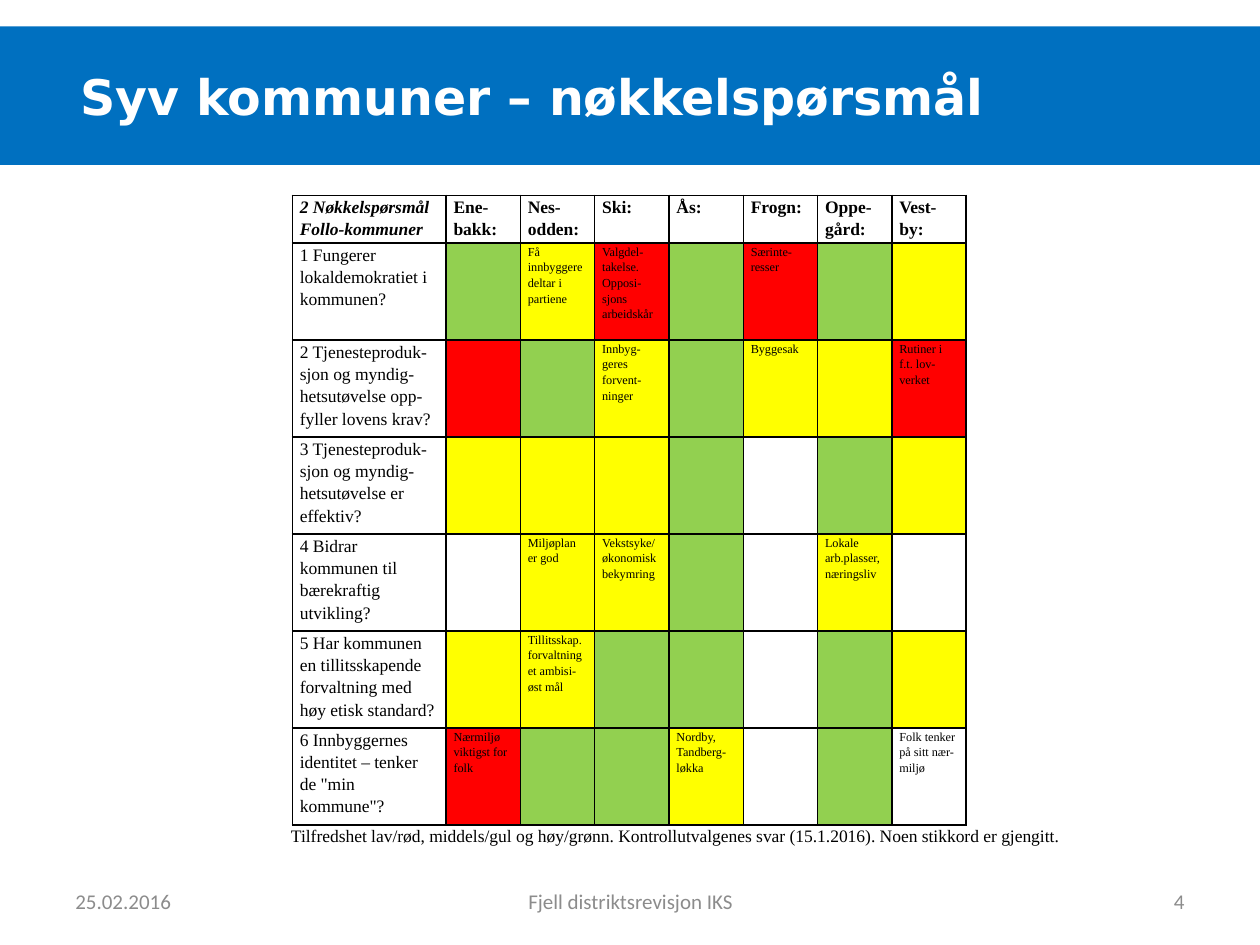
from typing import NamedTuple

from lxml import etree
from pptx import Presentation
from pptx.dml.color import RGBColor
from pptx.enum.text import MSO_ANCHOR, PP_ALIGN
from pptx.oxml.ns import qn
from pptx.util import Inches, Pt

SERIF = "Times New Roman"
BLACK, GREY, WHITE, BLUE = "000000", "8C8C8C", "FFFFFF", "0070C0"
RATING = {"g": "92D050", "y": "FFFF00", "r": "FF0000"}


class Style(NamedTuple):
    size: float
    font: str
    color: str
    bold: bool = False
    italic: bool = False


class Label(NamedTuple):
    text: str
    left: float
    top: float
    width: float
    height: float
    style: Style
    align: PP_ALIGN = PP_ALIGN.LEFT
    inset: float = 0.1


class Question(NamedTuple):
    text: str
    ratings: str  # one letter per municipality, "-" for no rating
    notes: dict[int, str]  # municipality column -> keyword


TITLE = Style(28, "DejaVu Sans", WHITE, bold=True)
FOOTER = Style(12, "Calibri", GREY)
BODY = Style(10, SERIF, BLACK)
HEAD = BODY._replace(bold=True)
NOTE = BODY._replace(size=7)

MUNICIPALITIES = ["Ene-bakk:", "Nes-odden:", "Ski:", "Ås:", "Frogn:",
                  "Oppe-gård:", "Vest-by:"]
QUESTIONS = [
    Question("1 Fungerer lokaldemokratiet i kommunen?", "gyrgrgy",
             {2: "Få innbyggere deltar i partiene",
              3: "Valgdel-takelse. Opposi-sjons arbeidskår",
              5: "Særinte-resser"}),
    Question("2 Tjenesteproduk-sjon og myndig-hetsutøvelse opp-fyller lovens krav?",
             "rgygyyr",
             {3: "Innbyg-geres forvent-ninger", 5: "Byggesak",
              7: "Rutiner i f.t. lov-verket"}),
    Question("3 Tjenesteproduk-sjon og myndig-hetsutøvelse er effektiv?",
             "yyyg-gy", {}),
    Question("4 Bidrar kommunen til bærekraftig utvikling?", "-yyg-y-",
             {2: "Miljøplan er god", 3: "Vekstsyke/ økonomisk bekymring",
              6: "Lokale arb.plasser, næringsliv"}),
    Question("5 Har kommunen en tillitsskapende forvaltning med høy etisk standard?",
             "yygg-gy", {2: "Tillitsskap. forvaltning et ambisi-øst mål"}),
    Question('6 Innbyggernes identitet – tenker de "min kommune"?', "rggy-g-",
             {1: "Nærmiljø viktigst for folk", 4: "Nordby, Tandberg-løkka",
              7: "Folk tenker på sitt nær-miljø"}),
]
LABELS = [
    Label("Tilfredshet lav/rød, middels/gul og høy/grønn. Kontrollutvalgenes svar "
          "(15.1.2016). Noen stikkord er gjengitt.",
          2.31, 6.53, 6.4, 0.2, BODY, inset=0),
    Label("25.02.2016", 0.5, 6.95, 2.33, 0.4, FOOTER),
    Label("Fjell distriktsrevisjon IKS", 3.42, 6.95, 3.17, 0.4, FOOTER, PP_ALIGN.CENTER),
    Label("4", 7.17, 6.95, 2.33, 0.4, FOOTER, PP_ALIGN.RIGHT),
]


def rgb(color: str) -> RGBColor:
    return RGBColor.from_string(color)


def add_run(p, text: str, style: Style) -> None:
    r = p.add_run()
    r.text = text
    r.font.size, r.font.name = Pt(style.size), style.font
    r.font.bold, r.font.italic = style.bold, style.italic
    r.font.color.rgb = rgb(style.color)


def add_label(s, label: Label) -> None:
    sp = s.shapes.add_textbox(Inches(label.left), Inches(label.top),
                              Inches(label.width), Inches(label.height))
    tf = sp.text_frame
    tf.word_wrap = True
    tf.vertical_anchor = MSO_ANCHOR.MIDDLE
    tf.margin_left = tf.margin_right = Inches(label.inset)
    tf.margin_top = tf.margin_bottom = 0
    p = tf.paragraphs[0]
    p.alignment = label.align
    add_run(p, label.text, label.style)


def add_borders(cell) -> None:
    # Border lines have to stand before the fill
    tc_pr = cell._tc.get_or_add_tcPr()
    for i, side in enumerate(("lnL", "lnR", "lnT", "lnB")):
        ln = etree.Element(qn(f"a:{side}"), w=str(Pt(1)))
        fill = etree.SubElement(ln, qn("a:solidFill"))
        etree.SubElement(fill, qn("a:srgbClr"), val=BLACK)
        tc_pr.insert(i, ln)


def fill_cell(cell, text: str, style: Style, rating: str = "-") -> None:
    cell.margin_left = cell.margin_right = Inches(0.06)
    cell.margin_top = cell.margin_bottom = 0
    if rating in RATING:
        cell.fill.solid()
        cell.fill.fore_color.rgb = rgb(RATING[rating])
    else:
        cell.fill.background()
    add_borders(cell)
    p = cell.text_frame.paragraphs[0]
    p.line_spacing = 1.15
    if text:
        add_run(p, text, style)


def add_title(s, text: str) -> None:
    sp = s.shapes.title
    sp.left, sp.top = Inches(0), Inches(0.21)
    sp.width, sp.height = Inches(10), Inches(1.1)
    sp.fill.solid()
    sp.fill.fore_color.rgb = rgb(BLUE)
    tf = sp.text_frame
    tf.margin_left = Inches(0.64)
    tf.vertical_anchor = MSO_ANCHOR.MIDDLE
    p = tf.paragraphs[0]
    p.alignment = PP_ALIGN.LEFT
    add_run(p, text, TITLE)


def add_rating_table(s) -> None:
    n_rows, n_cols = len(QUESTIONS) + 1, len(MUNICIPALITIES) + 1
    table = s.shapes.add_table(n_rows, n_cols, Inches(2.32), Inches(1.55),
                               Inches(5.35), Inches(4.98)).table
    table.first_row = table.horz_banding = False
    for i, col in enumerate(table.columns):
        col.width = Inches(0.59 if i else 1.22)
    for i, row in enumerate(table.rows):
        row.height = Inches(0.77 if i else 0.38)

    # Header row
    fill_cell(table.cell(0, 0), "2 Nøkkelspørsmål Follo-kommuner",
              HEAD._replace(italic=True))
    for col, name in enumerate(MUNICIPALITIES, 1):
        fill_cell(table.cell(0, col), name, HEAD)

    # One row per key question
    for row, question in enumerate(QUESTIONS, 1):
        fill_cell(table.cell(row, 0), question.text, BODY)
        for col, rating in enumerate(question.ratings, 1):
            fill_cell(table.cell(row, col), question.notes.get(col, ""), NOTE, rating)


def main() -> None:
    prs = Presentation()
    prs.slide_width, prs.slide_height = Inches(10), Inches(7.5)
    s = prs.slides.add_slide(prs.slide_layouts[5])
    add_title(s, "Syv kommuner – nøkkelspørsmål")
    add_rating_table(s)
    # Caption and footer
    for label in LABELS:
        add_label(s, label)
    prs.save("out.pptx")


if __name__ == "__main__":
    main()
